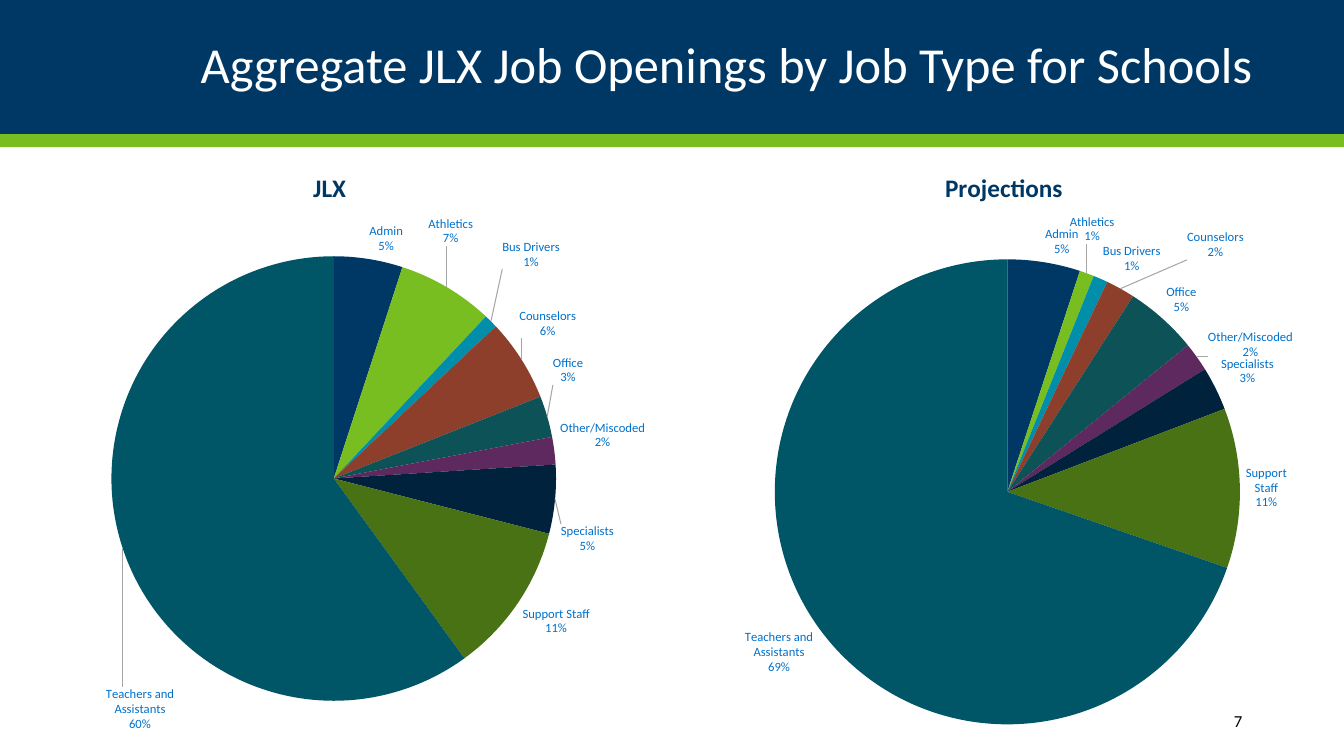
from copy import deepcopy
from pptx import Presentation
from pptx.chart.data import CategoryChartData
from pptx.dml.color import RGBColor
from pptx.enum.chart import XL_CHART_TYPE, XL_LABEL_POSITION
from pptx.enum.shapes import MSO_SHAPE
from pptx.enum.text import MSO_ANCHOR, PP_ALIGN
from pptx.oxml import parse_xml
from pptx.oxml.ns import nsdecls, qn
from pptx.util import Inches, Pt

FONT = "Calibri"
COLORS = {"navy": "003865", "green": "78BE21", "label": "0071CB",
          "white": "FFFFFF", "black": "000000", "leader": "A6A6A6"}
SLICES = {"Admin": "003865", "Athletics": "78BE21", "Bus Drivers": "008EAA",
          "Counselors": "8D3F2B", "Office": "0D5257", "Other/Miscoded": "5D295F",
          "Specialists": "00223D", "Support Staff": "487214",
          "Teachers and Assistants": "005566"}
JOB_TYPES = list(SLICES)
PIES = [
    {"title": "Projections", "box": (6.8, 1.47, 6.32, 5.88),
     "values": (5, 1, 1, 2, 5, 2, 3, 11, 69),
     "title_at": (0.4, 0.03), "plot": (0.14, 0.18, 0.73, 0.8),
     "moved": {"Athletics": (-0.03, -0.04), "Counselors": (0.1, -0.04),
               "Other/Miscoded": (0.01, 0.01)},
     "sizes": {"Other/Miscoded": (0.09, 0.12)}},
    {"title": "JLX", "box": (0, 1.53, 7.12, 5.96),
     "values": (5, 7, 1, 6, 3, 2, 5, 11, 60),
     "title_at": (0.43, 0.02), "plot": (0.12, 0.17, 0.69, 0.74),
     "moved": {"Athletics": (-0.03, -0.06), "Bus Drivers": (0.01, -0.08),
               "Counselors": (-0.01, -0.03), "Office": (0, -0.05),
               "Other/Miscoded": (0, 0), "Specialists": (0, 0.04),
               "Teachers and Assistants": (0.08, 0.23)},
     "sizes": {}},
]


def style_font(font, size, color, bold=False):
    font.name = FONT
    font.size = Pt(size)
    font.bold = bold
    font.color.rgb = RGBColor.from_string(COLORS[color])


def set_layout(parent, index, numbers, modes=""):
    for layout in parent.findall(qn("c:layout")):
        parent.remove(layout)
    values = "".join(f'<c:{name} val="{number}"/>'
                     for name, number in zip("xywh", numbers))
    parent.insert(index, parse_xml(
        f'<c:layout {nsdecls("c")}><c:manualLayout>{modes}{values}'
        '</c:manualLayout></c:layout>'))


presentation = Presentation()
presentation.slide_width = Inches(13.33)
presentation.slide_height = Inches(7.5)
slide = presentation.slides.add_slide(presentation.slide_layouts[6])

bands = []
for top, height, color in ((1.33, 0.13, "green"), (0, 1.33, "navy")):
    band = slide.shapes.add_shape(MSO_SHAPE.RECTANGLE, 0, Inches(top),
                                  presentation.slide_width, Inches(height))
    band.shadow.inherit = False
    band.fill.solid()
    band.fill.fore_color.rgb = RGBColor.from_string(COLORS[color])
    band.line.fill.background()
    bands.append(band)
header = bands[-1]
header.text_frame.margin_left = header.text_frame.margin_right = Inches(0.9)

edge_modes = '<c:xMode val="edge"/><c:yMode val="edge"/>'
for pie in PIES:
    chart_data = CategoryChartData()
    chart_data.categories = JOB_TYPES
    chart_data.add_series("Series 1", pie["values"])
    chart = slide.shapes.add_chart(
        XL_CHART_TYPE.PIE, *map(Inches, pie["box"]), chart_data).chart
    style_font(chart.font, 10, "navy")
    chart.has_legend = False
    chart.has_title = True
    run = chart.chart_title.text_frame.paragraphs[0].add_run()
    run.text = pie["title"]
    style_font(run.font, 18, "navy", True)
    set_layout(chart.chart_title._element, 1, pie["title_at"], edge_modes)
    plot_area = chart._chartSpace.find(".//" + qn("c:plotArea"))
    set_layout(plot_area, 0, pie["plot"],
               '<c:layoutTarget val="inner"/>' + edge_modes)

    plot = chart.plots[0]
    plot.vary_by_categories = True
    series = plot.series[0]
    for index, color in enumerate(SLICES.values()):
        fill = series.points[index].format.fill
        fill.solid()
        fill.fore_color.rgb = RGBColor.from_string(color)

    labels = series.data_labels
    labels.show_value = True
    labels.show_category_name = True
    labels.show_percentage = False
    labels.number_format = '0"%"'
    labels.number_format_is_linked = False
    labels.position = XL_LABEL_POSITION.OUTSIDE_END
    style_font(labels.font, 9, "label")
    group = labels._element
    group.find(qn("c:showBubbleSize")).addnext(
        parse_xml(f'<c:separator {nsdecls("c")}>\n</c:separator>'))
    shared = [child for child in group if child.tag != qn("c:showLeaderLines")]
    group.find(qn("c:showLeaderLines")).addnext(parse_xml(
        f'<c:leaderLines {nsdecls("c", "a")}><c:spPr><a:ln w="9525"><a:solidFill>'
        f'<a:srgbClr val="{COLORS["leader"]}"/></a:solidFill></a:ln></c:spPr>'
        '</c:leaderLines>'))
    for position, (job_type, offset) in enumerate(pie["moved"].items()):
        label = parse_xml(f'<c:dLbl {nsdecls("c")}>'
                          f'<c:idx val="{JOB_TYPES.index(job_type)}"/></c:dLbl>')
        set_layout(label, 1, offset)
        label.extend([deepcopy(child) for child in shared])
        if job_type in pie["sizes"]:
            width, height = pie["sizes"][job_type]
            label.append(parse_xml(
                f'<c:extLst {nsdecls("c")}>'
                '<c:ext uri="{CE6537A1-D6FC-4f65-9D91-7224C49458BB}" xmlns:c15='
                '"http://schemas.microsoft.com/office/drawing/2012/chart">'
                f'<c15:layout><c:manualLayout><c:w val="{width}"/>'
                f'<c:h val="{height}"/></c:manualLayout></c15:layout>'
                '</c:ext></c:extLst>'))
        group.insert(position, label)

page_number = slide.shapes.add_textbox(Inches(10.82), Inches(6.95),
                                       Inches(1.6), Inches(0.4))
for shape, text, size, color, spacing in (
        (header, "Aggregate JLX Job Openings by Job Type for Schools", 36, "white", 0.9),
        (page_number, "7", 12, "black", 1)):
    shape.text_frame.word_wrap = True
    shape.text_frame.vertical_anchor = MSO_ANCHOR.MIDDLE
    paragraph = shape.text_frame.paragraphs[0]
    paragraph.alignment = PP_ALIGN.RIGHT
    paragraph.line_spacing = spacing
    run = paragraph.add_run()
    run.text = text
    style_font(run.font, size, color)

presentation.save("out.pptx")
